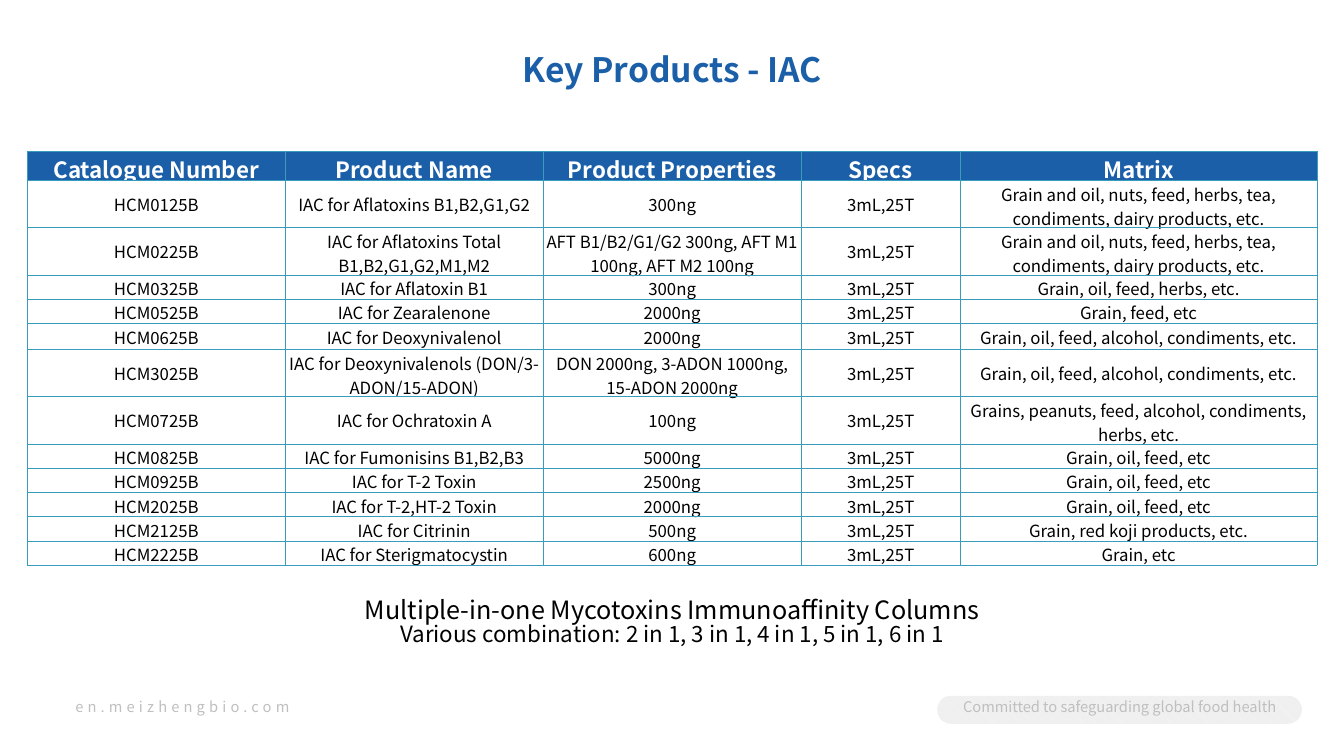
from dataclasses import dataclass

from lxml import etree
from pptx import Presentation
from pptx import util as u
from pptx.dml.color import RGBColor
from pptx.enum import dml, shapes, text
from pptx.oxml import ns


@dataclass(frozen=True)
class Theme:
    font: str = "Noto Sans CJK SC"
    blue: str = "1A5FA8"
    border: str = "399CBC"
    black: str = "000000"
    white: str = "FFFFFF"
    muted: str = "BFBFBF"
    pill_front: str = "E7E6E6"
    pill_back: str = "F2F2F2"
    title_size: float = 24
    lead_size: float = 18
    heading_size: float = 16
    cell_size: float = 12
    footer_size: float = 10.5
    line_spacing: float = 0.85
    border_width: float = 0.5


class SlideBuilder:
    def __init__(self, slide, theme):
        self.slide = slide
        self.theme = theme

    def style(self, paragraph, size, color, bold=False, align=text.PP_ALIGN.CENTER):
        paragraph.alignment = align
        for run in paragraph.runs:
            run.font.name = self.theme.font
            run.font.size = u.Pt(size)
            run.font.bold = bold
            run.font.color.rgb = RGBColor.from_string(color)

    def title(self, wording, left, top, width, height):
        heading = self.slide.shapes.title
        heading.left, heading.top = u.Cm(left), u.Cm(top)
        heading.width, heading.height = u.Cm(width), u.Cm(height)
        frame = heading.text_frame
        frame.text = wording
        frame.auto_size = text.MSO_AUTO_SIZE.NONE
        frame.vertical_anchor = text.MSO_ANCHOR.TOP
        frame.paragraphs[0].line_spacing = self.theme.line_spacing
        self.style(frame.paragraphs[0], self.theme.title_size, self.theme.blue, True)

    def text(self, lines, left, top, width, height, color, align=text.PP_ALIGN.CENTER):
        frame = self.slide.shapes.add_textbox(
            u.Cm(left), u.Cm(top), u.Cm(width), u.Cm(height)).text_frame
        frame.word_wrap = True
        frame.text = "\n".join(wording for wording, size in lines)
        for paragraph, (wording, size) in zip(frame.paragraphs, lines):
            paragraph.line_spacing = self.theme.line_spacing
            self.style(paragraph, size, color, align=align)
        return frame

    def pill(self, left, top, width, height):
        pill = self.slide.shapes.add_shape(
            shapes.MSO_SHAPE.ROUNDED_RECTANGLE,
            u.Cm(left), u.Cm(top), u.Cm(width), u.Cm(height))
        pill.adjustments[0] = 0.5
        pill.shadow.inherit = False
        pill.line.fill.background()
        pill.fill.patterned()
        pill.fill.pattern = dml.MSO_PATTERN.LIGHT_DOWNWARD_DIAGONAL
        pill.fill.fore_color.rgb = RGBColor.from_string(self.theme.pill_front)
        pill.fill.back_color.rgb = RGBColor.from_string(self.theme.pill_back)

    def borders(self, cell):
        properties = cell._tc.get_or_add_tcPr()
        for side in ("a:lnL", "a:lnR", "a:lnT", "a:lnB"):
            line = etree.SubElement(properties, ns.qn(side),
                                    w=str(u.Pt(self.theme.border_width)))
            solid = etree.SubElement(line, ns.qn("a:solidFill"))
            etree.SubElement(solid, ns.qn("a:srgbClr"), val=self.theme.border)

    def cell(self, cell, wording, is_header):
        theme = self.theme
        self.borders(cell)
        cell.vertical_anchor = text.MSO_ANCHOR.MIDDLE
        cell.margin_left = cell.margin_right = u.Cm(0.05 if is_header else 0.03)
        cell.margin_top = cell.margin_bottom = u.Cm(0.03)
        cell.text = wording
        if is_header:
            cell.fill.solid()
            cell.fill.fore_color.rgb = RGBColor.from_string(theme.blue)
            self.style(cell.text_frame.paragraphs[0], theme.heading_size, theme.white, True)
        else:
            cell.fill.background()
            self.style(cell.text_frame.paragraphs[0], theme.cell_size, theme.black)

    def table(self, rows, left, top, width, height, column_widths, row_heights):
        frame = self.slide.shapes.add_table(
            len(rows), len(column_widths),
            u.Cm(left), u.Cm(top), u.Cm(width), u.Cm(height))
        table = frame.table
        table.horz_banding = False
        for column, column_width in zip(table.columns, column_widths):
            column.width = u.Cm(column_width)
        for index, (entries, row_height) in enumerate(zip(rows, row_heights)):
            table.rows[index].height = u.Cm(row_height)
            for cell, wording in zip(table.rows[index].cells, entries):
                self.cell(cell, wording, index == 0)
        frame.height = u.Cm(height)


SPECS = "3mL,25T"
HEADINGS = ("Catalogue Number", "Product Name", "Product Properties", "Specs", "Matrix")
NUTS_AND_DAIRY = "Grain and oil, nuts, feed, herbs, tea, condiments, dairy products, etc."
ALCOHOL = "Grain, oil, feed, alcohol, condiments, etc."
FEED = "Grain, oil, feed, etc"
PRODUCTS = [
    ("HCM0125B", "Aflatoxins B1,B2,G1,G2", "300ng", NUTS_AND_DAIRY),
    ("HCM0225B", "Aflatoxins Total B1,B2,G1,G2,M1,M2",
     "AFT B1/B2/G1/G2 300ng, AFT M1 100ng, AFT M2 100ng", NUTS_AND_DAIRY),
    ("HCM0325B", "Aflatoxin B1", "300ng", "Grain, oil, feed, herbs, etc."),
    ("HCM0525B", "Zearalenone", "2000ng", "Grain, feed, etc"),
    ("HCM0625B", "Deoxynivalenol", "2000ng", ALCOHOL),
    ("HCM3025B", "Deoxynivalenols (DON/3-ADON/15-ADON)",
     "DON 2000ng, 3-ADON 1000ng, 15-ADON 2000ng", ALCOHOL),
    ("HCM0725B", "Ochratoxin A", "100ng",
     "Grains, peanuts, feed, alcohol, condiments, herbs, etc."),
    ("HCM0825B", "Fumonisins B1,B2,B3", "5000ng", FEED),
    ("HCM0925B", "T-2 Toxin", "2500ng", FEED),
    ("HCM2025B", "T-2,HT-2 Toxin", "2000ng", FEED),
    ("HCM2125B", "Citrinin", "500ng", "Grain, red koji products, etc."),
    ("HCM2225B", "Sterigmatocystin", "600ng", "Grain, etc"),
]
ONE_LINE, TWO_LINES = 0.61, 1.19
COLUMN_WIDTHS = [6.5] * 3 + [4.01, 8.99]
ROW_HEIGHTS = ([0.64] + [TWO_LINES] * 2 + [ONE_LINE] * 2 + [0.66]
               + [TWO_LINES] * 2 + [ONE_LINE] * 5)


def main():
    theme = Theme()
    deck = Presentation()
    deck.slide_width, deck.slide_height = u.Cm(33.87), u.Cm(19.05)
    builder = SlideBuilder(deck.slides.add_slide(deck.slide_layouts[5]), theme)

    website = builder.text([("en.meizhengbio.com", theme.footer_size)],
                           1.65, 17.53, 8.61, 0.71, theme.muted, text.PP_ALIGN.LEFT)
    website.paragraphs[0].runs[0].font._element.set("spc", "300")
    builder.pill(23.62, 17.53, 9.19, 0.71)
    builder.text([("Committed to safeguarding global food health", theme.footer_size)],
                 23.8, 17.53, 8.84, 0.71, theme.muted)

    rows = [HEADINGS] + [(number, f"IAC for {target}", properties, SPECS, matrix)
                         for number, target, properties, matrix in PRODUCTS]
    builder.table(rows, 0.69, 3.81, 32.5, 10.41, COLUMN_WIDTHS, ROW_HEIGHTS)

    builder.text([("Multiple-in-one Mycotoxins Immunoaffinity Columns", theme.lead_size),
                  ("Various combination: 2 in 1, 3 in 1, 4 in 1, 5 in 1, 6 in 1",
                   theme.heading_size)],
                 6.07, 14.96, 21.74, 1.7, theme.black)
    builder.title("Key Products - IAC", 8.47, 1.27, 16.94, 1.27)
    deck.save("out.pptx")


if __name__ == "__main__":
    main()
